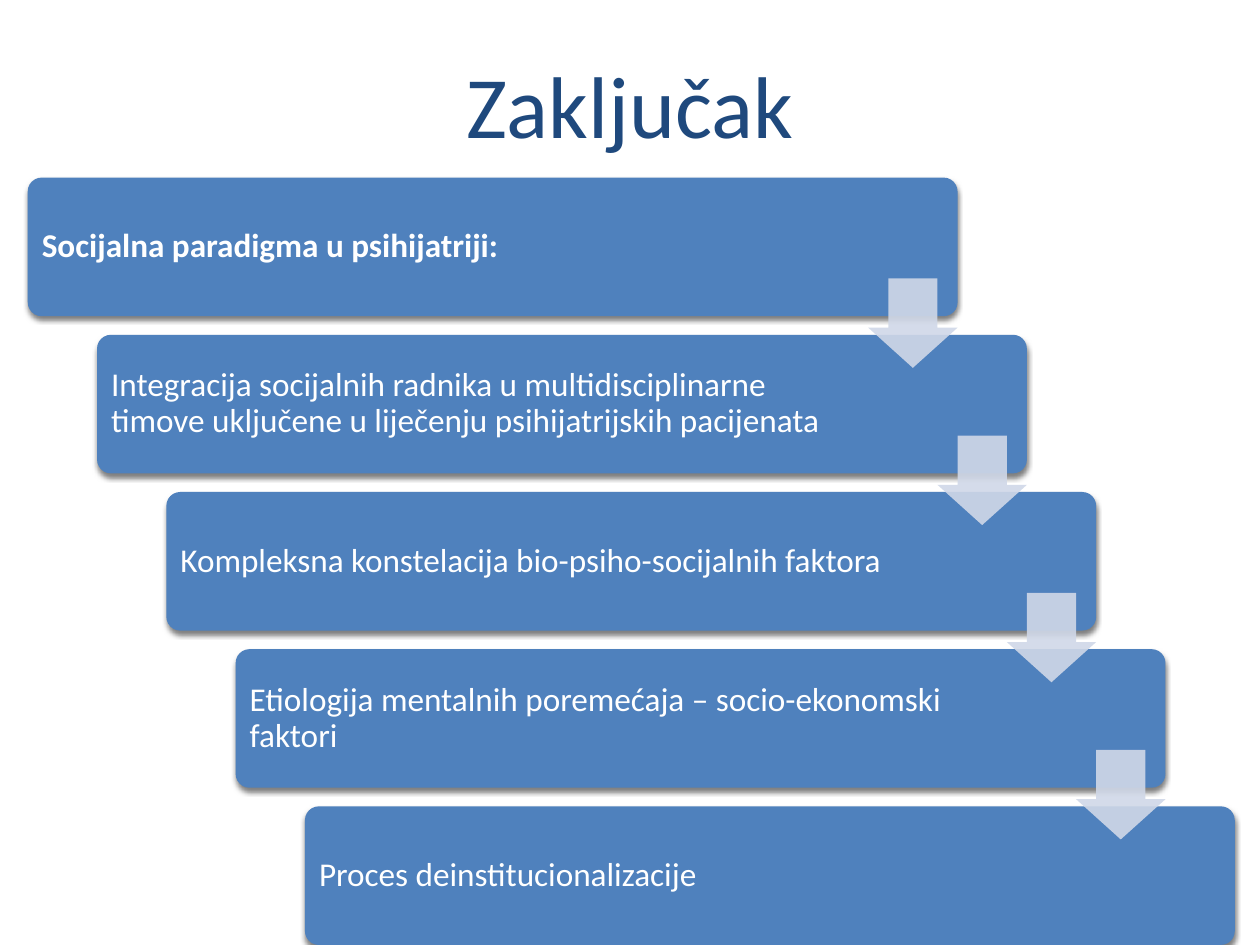
from lxml.etree import SubElement
from pptx import Presentation
from pptx.dml.color import RGBColor
from pptx.enum.shapes import MSO_SHAPE as Shape
from pptx.enum.text import MSO_ANCHOR as Anchor, PP_ALIGN as Align
from pptx.oxml.ns import qn
from pptx.util import Inches, Pt

TITLE = "Zaključak"
STEPS = [
    "Socijalna paradigma u psihijatriji:",
    "Integracija socijalnih radnika u multidisciplinarne timove "
    "uključene u liječenju psihijatrijskih pacijenata",
    "Kompleksna konstelacija bio-psiho-socijalnih faktora",
    "Etiologija mentalnih poremećaja – socio-ekonomski faktori",
    "Proces deinstitucionalizacije",
]

NAVY = RGBColor(0x1F, 0x49, 0x7D)
BLUE = RGBColor(0x4F, 0x81, 0xBD)
PALE = RGBColor(0xD0, 0xD8, 0xE8)
WHITE = RGBColor(0xFF, 0xFF, 0xFF)

SLIDE_W, SLIDE_H = 10, 7.5
LEFT, TOP = 0.22, 1.41
BAR_W, BAR_H = 7.38, 1.1
STEP_X = 0.55
STEP_Y = (SLIDE_H - BAR_H - TOP) / (len(STEPS) - 1)  # last bar ends at the slide's edge
ARROW = 0.71
ARROW_DROP = 0.8  # from a bar's top to its arrow's top
MARGINS = dict(margin_left=0.08, margin_top=0.08, margin_right=1.35, margin_bottom=0.08)


def set_font(font, size, color, bold=False):
    formats = dict(name="Calibri", size=Pt(size), bold=bold)
    for key, value in formats.items():
        setattr(font, key, value)
    font.color.rgb = color


def set_alpha(color_element, percent):
    SubElement(color_element, qn("a:alpha"), val=str(percent * 1000))


def add_plain_shape(slide, kind, box, color, adjustments):
    shape = slide.shapes.add_shape(kind, *map(Inches, box))
    for i, value in enumerate(adjustments):
        shape.adjustments[i] = value
    shape.fill.solid()
    shape.fill.fore_color.rgb = color
    shape.line.fill.background()
    shape.shadow.inherit = False
    return shape


def add_drop_shadow(shape):
    effects = shape._element.spPr.find(qn("a:effectLst"))
    shadow = SubElement(effects, qn("a:outerShdw"), blurRad=str(Pt(3)),
                        dist=str(Pt(2)), dir=str(90 * 60000), rotWithShape="0")
    set_alpha(SubElement(shadow, qn("a:srgbClr"), val="000000"), 50)


def add_bar(slide, x, y, text, bold):
    bar = add_plain_shape(slide, Shape.ROUNDED_RECTANGLE, (x, y, BAR_W, BAR_H), BLUE, [0.1])
    add_drop_shadow(bar)
    frame = bar.text_frame
    frame.word_wrap = True
    frame.vertical_anchor = Anchor.MIDDLE
    for key, value in MARGINS.items():
        setattr(frame, key, Inches(value))
    paragraph = frame.paragraphs[0]
    paragraph.text = text
    paragraph.alignment = Align.LEFT
    paragraph.line_spacing = 0.9
    set_font(paragraph.runs[0].font, 19, WHITE, bold)


def add_arrow(slide, x, y):
    arrow = add_plain_shape(slide, Shape.DOWN_ARROW, (x, y, ARROW, ARROW), PALE, [0.55, 0.45])
    # The preset lists the head length first and the shaft width second.
    arrow.adjustments[0], arrow.adjustments[1] = 0.55, 0.45
    set_alpha(arrow._element.spPr.find(qn("a:solidFill"))[0], 90)


def add_title(slide):
    title = slide.shapes.title
    places = dict(left=0.75, top=0.07, width=8.5, height=1.5)
    for key, value in places.items():
        setattr(title, key, Inches(value))
    title.text_frame.vertical_anchor = Anchor.MIDDLE
    paragraph = title.text_frame.paragraphs[0]
    paragraph.text = TITLE
    paragraph.alignment = Align.CENTER
    set_font(paragraph.runs[0].font, 50, NAVY)


def main():
    deck = Presentation()
    deck.slide_width, deck.slide_height = Inches(SLIDE_W), Inches(SLIDE_H)
    slide = deck.slides.add_slide(deck.slide_layouts[5])
    add_title(slide)
    corners = [(LEFT + i * STEP_X, TOP + i * STEP_Y) for i in range(len(STEPS))]
    for i, ((x, y), text) in enumerate(zip(corners, STEPS)):
        add_bar(slide, x, y, text, bold=i == 0)
    for x, y in corners[:-1]:
        add_arrow(slide, x + BAR_W - ARROW, y + ARROW_DROP)
    deck.save("out.pptx")


if __name__ == "__main__":
    main()
